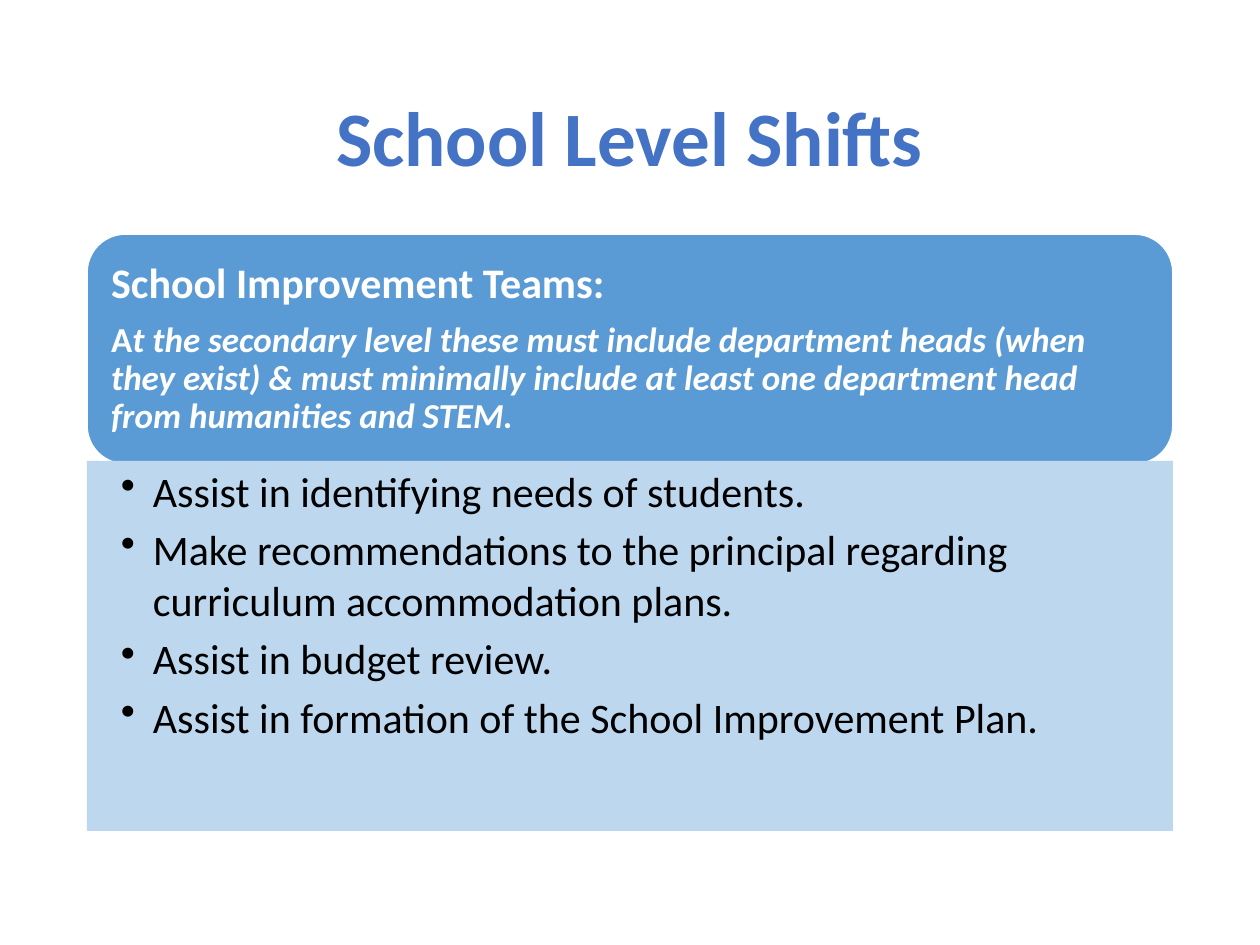
import pptx
import pptx.util
import pptx.dml.color
import pptx.enum.shapes
import pptx.enum.text
import pptx.oxml.ns
import lxml.etree
from dataclasses import dataclass

SHAPES = pptx.enum.shapes.MSO_SHAPE
ANCHOR = pptx.enum.text.MSO_ANCHOR
ALIGN = pptx.enum.text.PP_ALIGN
PX_PER_INCH = 126


@dataclass(frozen=True)
class Theme:
    font: str = "Calibri"
    title: str = "4472C4"
    banner: str = "5B9BD5"
    panel: str = "BDD7EE"
    light: str = "FFFFFF"
    dark: str = "000000"
    title_size: int = 44
    body_size: int = 24
    detail_size: int = 20


THEME = Theme()


def px(length):
    return pptx.util.Emu(round(length * 914400 / PX_PER_INCH))


def rgb(value):
    return pptx.dml.color.RGBColor.from_string(value)


def apply(target, values):
    for name, value in values.items():
        setattr(target, name, value)


def set_frame(frame, anchor, insets):
    sides = ("margin_left", "margin_top", "margin_right", "margin_bottom")
    apply(frame, {"word_wrap": True, "vertical_anchor": anchor,
                  **{side: px(inset) for side, inset in zip(sides, insets)}})


def add_run(paragraph, text, size, color, **style):
    run = paragraph.add_run()
    run.text = text
    apply(run.font, {"name": THEME.font, "size": pptx.util.Pt(size), **style})
    run.font.color.rgb = rgb(color)


def add_block(slide, kind, box, fill):
    block = slide.shapes.add_shape(kind, *map(px, box))
    block.shadow.inherit = False
    block.fill.solid()
    block.fill.fore_color.rgb = rgb(fill)
    block.line.fill.background()
    return block


def add_bullet(paragraph, indent):
    properties = paragraph._p.get_or_add_pPr()
    properties.set("marL", str(px(indent)))
    properties.set("indent", str(-px(indent)))
    bullet = lxml.etree.SubElement(properties, pptx.oxml.ns.qn("a:buChar"))
    bullet.set("char", "•")


def add_title(slide, box, text):
    frame = slide.shapes.add_textbox(*map(px, box)).text_frame
    set_frame(frame, ANCHOR.MIDDLE, (13, 6, 13, 6))
    heading = frame.paragraphs[0]
    apply(heading, {"alignment": ALIGN.CENTER, "line_spacing": 0.9})
    add_run(heading, text, THEME.title_size, THEME.title, bold=True)


def add_banner(slide, box, heading, detail):
    banner = add_block(slide, SHAPES.ROUNDED_RECTANGLE, box, THEME.banner)
    banner.line.color.rgb = rgb(THEME.light)
    banner.line.width = pptx.util.Pt(1)
    frame = banner.text_frame
    set_frame(frame, ANCHOR.MIDDLE, (13, 13, 13, 13))

    # Each line holds its type size and its runs of (text, italic)
    lines = [(THEME.body_size, [(heading, False)]), (THEME.detail_size, detail)]
    for index, (size, runs) in enumerate(lines):
        paragraph = frame.add_paragraph() if index else frame.paragraphs[0]
        apply(paragraph, {"alignment": ALIGN.LEFT, "line_spacing": 0.9,
                          "space_after": pptx.util.Pt(size * 0.35)})
        for text, italic in runs:
            add_run(paragraph, text, size, THEME.light, bold=True, italic=italic)


def add_duties(slide, box, duties):
    panel = add_block(slide, SHAPES.RECTANGLE, box, THEME.panel)
    frame = panel.text_frame
    set_frame(frame, ANCHOR.TOP, (34, 4, 24, 4))
    for index, duty in enumerate(duties):
        paragraph = frame.add_paragraph() if index else frame.paragraphs[0]
        add_bullet(paragraph, 32)
        apply(paragraph, {"alignment": ALIGN.LEFT, "level": 1,
                          "space_after": pptx.util.Pt(THEME.body_size * 0.2)})
        add_run(paragraph, duty, THEME.body_size, THEME.dark)


def main():
    deck = pptx.Presentation()
    apply(deck, {"slide_width": px(1260), "slide_height": px(945)})
    slide = deck.slides.add_slide(deck.slide_layouts[6])
    left, width = 87, 1086

    # Title
    add_title(slide, (left, 50, width, 183), "School Level Shifts")

    # Team heading
    add_banner(slide, (left, 234, width, 230), "School Improvement Teams:", [
        ("A", False),
        ("t the secondary level these must include department heads (when they "
         "exist) & must minimally include at least one department head from "
         "humanities and STEM.", True),
    ])

    # Team duties
    add_duties(slide, (left, 461, width, 370), [
        "Assist in identifying needs of students.",
        "Make recommendations to the principal regarding curriculum "
        "accommodation plans.",
        "Assist in budget review.",
        "Assist in formation of the School Improvement Plan.",
    ])
    deck.save("out.pptx")


if __name__ == "__main__":
    main()
